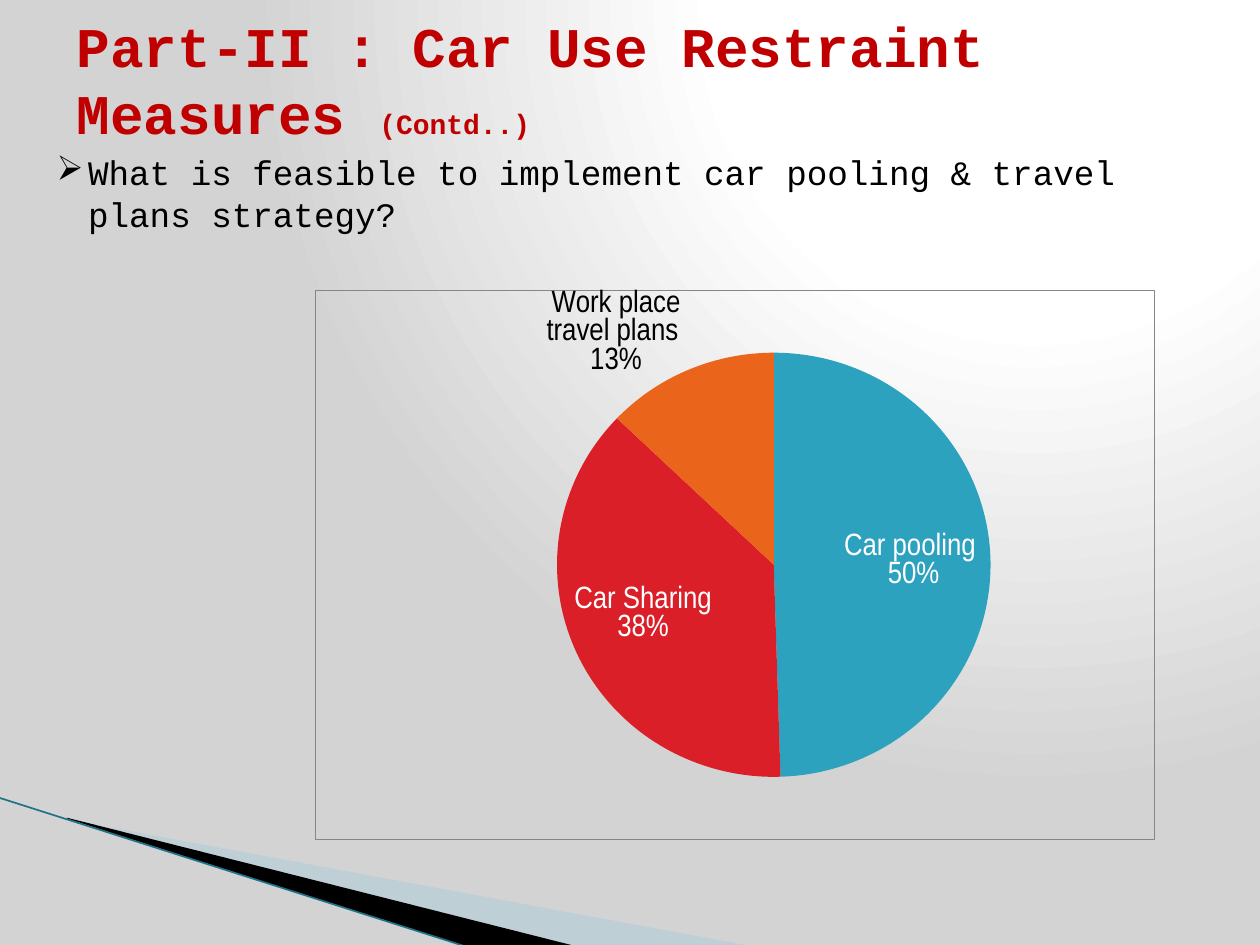
"""Build the slide on car use restraint measures with its strategy pie chart."""
from lxml import etree
from pptx import Presentation
from pptx.chart.data import CategoryChartData
from pptx.dml.color import RGBColor
from pptx.enum.chart import XL_CHART_TYPE as ChartType, XL_LABEL_POSITION as LabelPosition
from pptx.enum.shapes import MSO_CONNECTOR as Connector
from pptx.enum.text import MSO_ANCHOR as Anchor
from pptx.oxml import parse_xml
from pptx.oxml.ns import nsdecls, qn
from pptx.util import Pt


def color(value):
    return RGBColor.from_string(value)


def add_run(paragraph, text, size, ink, bold=False):
    run = paragraph.add_run()
    run.text = text
    run.font.name = "Courier New"
    run.font.size = Pt(size)
    run.font.bold = bold
    run.font.color.rgb = color(ink)


deck = Presentation()
deck.slide_width, deck.slide_height = Pt(720), Pt(540)
slide = deck.slides.add_slide(deck.slide_layouts[6])
shapes = slide.shapes

stops = "".join(
    f'<a:gs pos="{position * 1000}"><a:srgbClr val="{shade}"/></a:gs>'
    for position, shade in [(0, "FFFFFF"), (40, "FFFFFF"), (100, "D3D3D3")]
)
slide.element.cSld.insert(0, parse_xml(
    f'<p:bg {nsdecls("p", "a")}><p:bgPr><a:gradFill rotWithShape="1"><a:gsLst>{stops}</a:gsLst>'
    '<a:path path="circle"><a:fillToRect l="65000" t="0" r="0" b="98000"/></a:path>'
    '</a:gradFill><a:effectLst/></p:bgPr></p:bg>'
))

wedges = [
    ([(39.6, 468.5), (428.4, 540.5), (328.3, 540.5), (39.6, 468)], "A0CBDC", 40),
    ([(38.2, 467.3), (329, 540.7), (267.8, 541.4), (38.9, 468)], "000000", 100),
]
for corners, shade, opacity in wedges:
    points = [(Pt(x), Pt(y)) for x, y in corners]
    outline = shapes.build_freeform(*points[0], scale=1.0)
    outline.add_line_segments(points[1:], close=True)
    wedge = outline.convert_to_shape()
    wedge.shadow.inherit = False
    wedge.line.fill.background()
    wedge.fill.solid()
    wedge.fill.fore_color.rgb = color(shade)
    if opacity < 100:
        tint = wedge.fill._xPr.find(".//" + qn("a:srgbClr"))
        etree.SubElement(tint, qn("a:alpha")).set("val", str(opacity * 1000))

edge = shapes.add_connector(Connector.STRAIGHT, Pt(-0.7), Pt(455.8), Pt(267.8), Pt(541.4))
edge.line.color.rgb = color("1F7388")
edge.line.width = Pt(0.95)
etree.SubElement(edge._element.spPr, qn("a:effectLst"))

question = shapes.add_textbox(Pt(25.3), Pt(83.1), Pt(657.4), Pt(59)).text_frame
question.word_wrap = True
paragraph = question.paragraphs[0]
properties = paragraph._p.get_or_add_pPr()
properties.set("marL", str(Pt(18)))
properties.set("indent", str(-Pt(18)))
etree.SubElement(properties, qn("a:buChar")).set("char", "➢")
add_run(paragraph, "What is feasible to implement car pooling & travel plans strategy?", 19.6, "000000")

data = CategoryChartData()
data.categories = ["Car pooling ", "Car Sharing", "Work place travel plans "]
data.add_series("Series 1", [50, 38, 13])
chart = shapes.add_chart(ChartType.PIE, Pt(180), Pt(159.1), Pt(480.3), Pt(321), data).chart
chart.has_legend = False
chart.has_title = False
chart.font.name = "Courier New"
chart.font.size = Pt(10)
chart.font.color.rgb = color("000000")
chart._chartSpace.find(qn("c:txPr")).addprevious(parse_xml(
    f'<c:spPr {nsdecls("c", "a")}><a:noFill/><a:ln w="9525"><a:solidFill>'
    '<a:srgbClr val="868686"/></a:solidFill></a:ln></c:spPr>'
))

plot_area = chart._chartSpace.chart.plotArea
for layout in plot_area.findall(qn("c:layout")):
    plot_area.remove(layout)
frame = "".join(
    f'<c:{name} val="{value}"/>' for name, value in [
        ("layoutTarget", "inner"), ("xMode", "edge"), ("yMode", "edge"),
        ("x", 0.139), ("y", 0.113), ("w", 0.814), ("h", 0.773),
    ]
)
plot_area.insert(0, parse_xml(
    f'<c:layout {nsdecls("c")}><c:manualLayout>{frame}</c:manualLayout></c:layout>'
))

pie = chart.plots[0]
pie.vary_by_categories = True
slices = [
    ("2DA2BF", "FFFFFF", LabelPosition.INSIDE_END),
    ("DA1F28", "FFFFFF", LabelPosition.INSIDE_END),
    ("EB641B", "000000", LabelPosition.OUTSIDE_END),
]
for index, (shade, ink, position) in enumerate(slices):
    share = pie.series[0].points[index]
    share.format.fill.solid()
    share.format.fill.fore_color.rgb = color(shade)
    share.format.line.fill.background()
    label = share.data_label
    label.font.name = "Arial Narrow"
    label.font.size = Pt(18)
    label.font.color.rgb = color(ink)
    label.position = position
labels = pie.series[0].data_labels
labels.show_percentage = labels.show_category_name = True
labels.show_value = False
for flag, value in [("showVal", "0"), ("showCatName", "1"), ("showPercent", "1")]:
    for element in labels._element.iter(qn(f"c:{flag}")):
        element.set("val", value)
point_labels = labels._element.findall(qn("c:dLbl"))
for label in point_labels:
    etree.SubElement(label, qn("c:separator")).text = "\n"
point_labels[1].find(qn("c:idx")).addnext(parse_xml(
    f'<c:layout {nsdecls("c")}><c:manualLayout><c:x val="-0.01"/><c:y val="-0.01"/>'
    '</c:manualLayout></c:layout>'
))

title = shapes.add_textbox(Pt(36.7), Pt(0), Pt(648), Pt(90)).text_frame
title.word_wrap = True
title.vertical_anchor = Anchor.MIDDLE
heading = title.paragraphs[0]
add_run(heading, "Part-II : Car Use Restraint Measures ", 32, "C00000", True)
add_run(heading, "(Contd..)", 16, "C00000", True)

deck.save("out.pptx")
